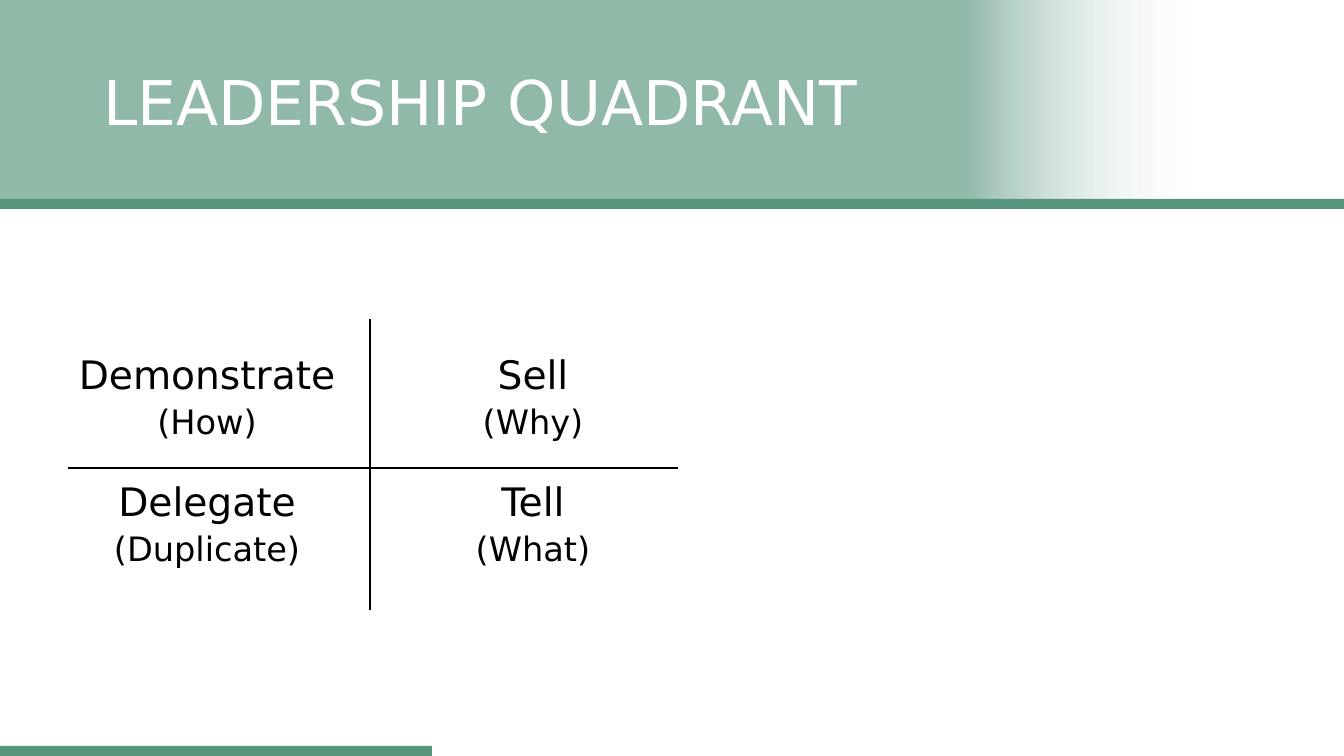
from lxml import etree
from pptx import Presentation
from pptx import util as u
from pptx.dml.color import RGBColor
from pptx.enum import shapes, text
from pptx.oxml.ns import qn

TITLE = "LEADERSHIP QUADRANT"
QUADRANTS = [
    [("Demonstrate", "(How)"), ("Sell", "(Why)")],
    [("Delegate", "(Duplicate)"), ("Tell", "(What)")],
]

FONT = "DejaVu Sans"
GREEN = RGBColor(0x58, 0x95, 0x7D)
WHITE = RGBColor(0xFF, 0xFF, 0xFF)
BLACK = RGBColor(0, 0, 0)

SLIDE_W, SLIDE_H = 1344, 756
EMU_PER_PX = u.Inches(1) / 100.8
COLUMN_LEFT, COLUMN_W = 44, 326
ROWS = [(351, 108), (478, 209)]  # top, height
AXES = [(370, 319, 370, 610), (68, 468, 678, 468)]


def px(*lengths):
    return [u.Emu(round(length * EMU_PER_PX)) for length in lengths]


def add_bar(slide, *box):
    bar = slide.shapes.add_shape(shapes.MSO_SHAPE.RECTANGLE, *px(*box))
    bar.shadow.inherit = False
    bar.line.fill.background()
    bar.fill.solid()
    bar.fill.fore_color.rgb = GREEN
    return bar


def fade_right(band):
    """Fill with translucent green that fades out over the last fifth."""
    band.fill.gradient()
    band.fill.gradient_angle = 0
    looks = [(0.8, GREEN, 65000), (1, WHITE, 0)]
    for stop, (position, color, alpha) in zip(band.fill.gradient_stops, looks):
        stop.position = position
        stop.color.rgb = color
    for srgb, look in zip(band.element.spPr.iter(qn("a:srgbClr")), looks):
        etree.SubElement(srgb, qn("a:alpha"), val=str(look[2]))


def style(paragraph, size, color):
    paragraph.line_spacing = 0.9
    paragraph.font.name = FONT
    paragraph.font.size = u.Pt(size)
    paragraph.font.color.rgb = color


def place_title(slide, band):
    title = slide.shapes.title
    title.left, title.top, title.width, title.height = px(93, 33, 1159, 146)
    frame = title.text_frame
    frame.text = TITLE
    frame.auto_size = text.MSO_AUTO_SIZE.NONE
    frame.vertical_anchor = text.MSO_ANCHOR.MIDDLE
    frame.paragraphs[0].alignment = text.PP_ALIGN.LEFT
    style(frame.paragraphs[0], 44, WHITE)
    band.element.addnext(title.element)


def add_quadrant(slide, box, action, question):
    frame = slide.shapes.add_textbox(*px(*box)).text_frame
    frame.word_wrap = True
    frame.text = f"{action}\n{question}"
    for paragraph, size in zip(frame.paragraphs, (28, 24)):
        paragraph.alignment = text.PP_ALIGN.CENTER
        style(paragraph, size, BLACK)
    frame.paragraphs[1].space_before = u.Pt(5)


def add_axis(slide, ends):
    axis = slide.shapes.add_connector(shapes.MSO_CONNECTOR.STRAIGHT, *px(*ends))
    axis.line.color.rgb = BLACK
    axis.line.width = u.Pt(1.5)
    etree.SubElement(axis.element.spPr, qn("a:effectLst"))


def main():
    deck = Presentation()
    deck.slide_width, deck.slide_height = px(SLIDE_W, SLIDE_H)
    slide = deck.slides.add_slide(deck.slide_layouts.get_by_name("Title Only"))

    band = add_bar(slide, -2, 0, 1211, 209)
    fade_right(band)
    place_title(slide, band)
    add_bar(slide, 0, 746, 432, 10)
    add_bar(slide, 0, 199, SLIDE_W, 10)

    for (top, height), row in zip(ROWS, QUADRANTS):
        for column, (action, question) in enumerate(row):
            left = COLUMN_LEFT + column * COLUMN_W
            add_quadrant(slide, (left, top, COLUMN_W, height), action, question)
    for ends in AXES:
        add_axis(slide, ends)

    deck.save("out.pptx")


if __name__ == "__main__":
    main()
